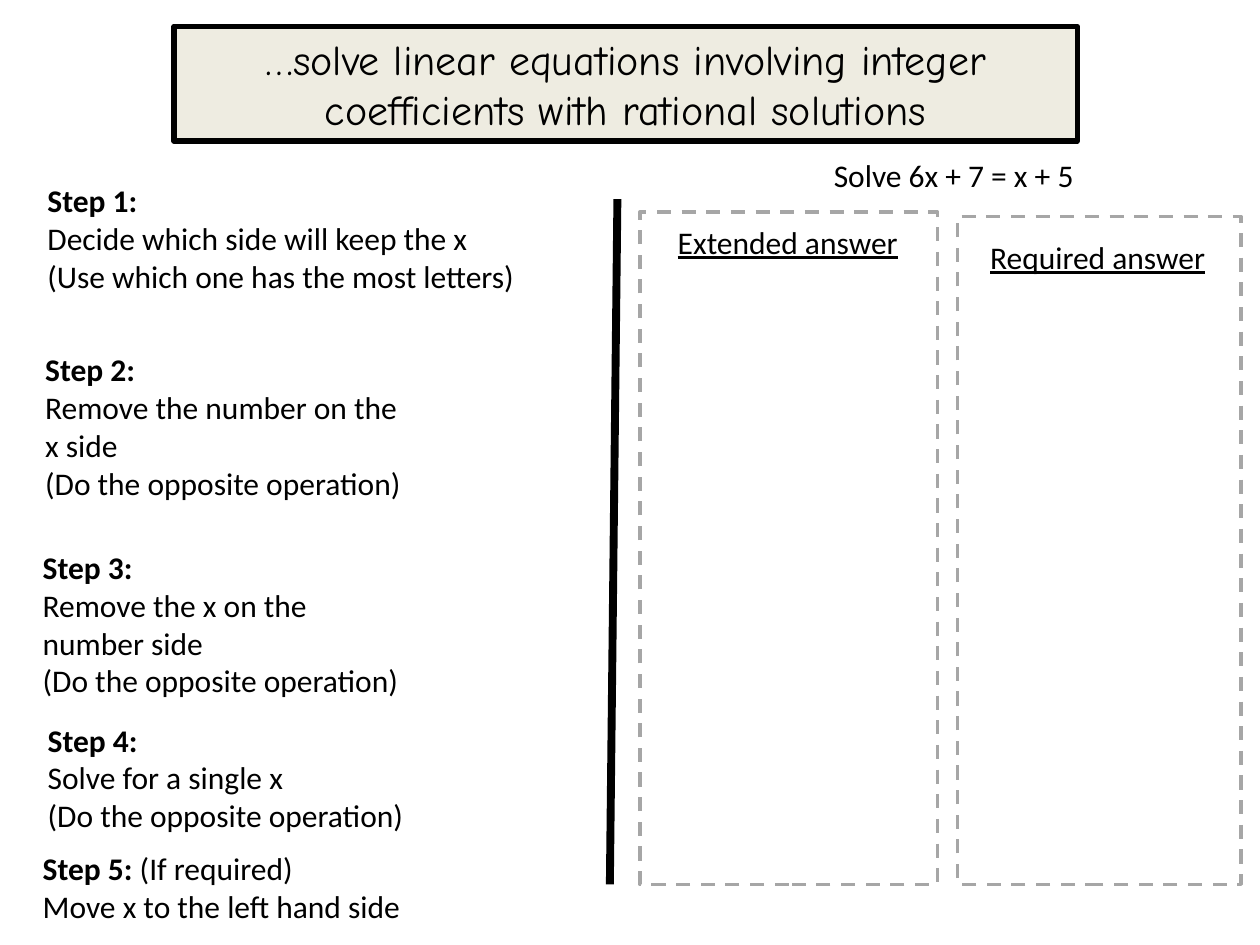
from pptx import Presentation
from pptx.dml.color import RGBColor
from pptx.enum.dml import MSO_LINE
from pptx.enum.shapes import MSO_CONNECTOR as CONN, MSO_SHAPE as SHAPE
from pptx.enum.text import MSO_ANCHOR as ANCHOR, PP_ALIGN as ALIGN
from pptx.oxml.ns import qn
from pptx.util import Pt
from lxml import etree

COLORS = {"ink": "000000", "cream": "EEECE1", "dash": "A6A6A6"}
OPPOSITE = "(Do the opposite operation)"


def rgb(name):
    return RGBColor.from_string(COLORS[name])


def add_text(p, text, font="Calibri", size=18, color="ink", bold=False, underline=False):
    r = p.add_run()
    r.text = text
    f = r.font
    f.name, f.size, f.bold, f.underline = font, Pt(size), bold, underline
    f.color.rgb = rgb(color)


class SlideBuilder:
    def __init__(self, slide):
        self.shapes = slide.shapes

    def box(self, x, y, w, h, line, weight, fill=None, dash=None):
        sp = self.shapes.add_shape(SHAPE.RECTANGLE, Pt(x), Pt(y), Pt(w), Pt(h))
        sp.shadow.inherit = False
        if fill:
            sp.fill.solid()
            sp.fill.fore_color.rgb = rgb(fill)
        else:
            sp.fill.background()
        sp.line.color.rgb = rgb(line)
        sp.line.width = Pt(weight)
        if dash:
            sp.line.dash_style = dash
        return sp

    def title(self, text, x, y, w, h):
        tf = self.box(x, y, w, h, "ink", 3, fill="cream").text_frame
        tf.word_wrap = True
        tf.vertical_anchor = ANCHOR.MIDDLE
        p = tf.paragraphs[0]
        p.alignment = ALIGN.CENTER
        add_text(p, text, font="Comic Neue", size=24)

    def line(self, x1, y1, x2, y2, weight):
        cn = self.shapes.add_connector(CONN.STRAIGHT, Pt(x1), Pt(y1), Pt(x2), Pt(y2))
        cn.line.color.rgb = rgb("ink")
        cn.line.width = Pt(weight)
        etree.SubElement(cn._element.spPr, qn("a:effectLst"))

    def text_box(self, x, y, w, h, wrap=False):
        tf = self.shapes.add_textbox(Pt(x), Pt(y), Pt(w), Pt(h)).text_frame
        tf.word_wrap = wrap
        return tf

    def label(self, text, x, y, w, h, **fmt):
        add_text(self.text_box(x, y, w, h).paragraphs[0], text, **fmt)

    def step(self, heading, note, lines, x, y, w, h, wrap):
        """Bold heading, optional plain note beside it, then plain lines."""
        tf = self.text_box(x, y, w, h, wrap)
        p = tf.paragraphs[0]
        add_text(p, heading, bold=True)
        if note:
            add_text(p, note)
        for text in lines:
            add_text(tf.add_paragraph(), text)


def main():
    prs = Presentation()
    prs.slide_width, prs.slide_height = Pt(720), Pt(540)
    s = SlideBuilder(prs.slides.add_slide(prs.slide_layouts[6]))

    s.title("…solve linear equations involving integer coefficients with rational solutions",
            99.4, 15.1, 516.2, 65.5)
    s.line(352.8, 113.8, 348.5, 505.4, 4.5)

    steps = [
        ("Step 1:", "", ["Decide which side will keep the x",
                         "(Use which one has the most letters)"],
         20, 100.1, 294.5, 72.7, True),
        ("Step 2:", "", ["Remove the number on the x side", OPPOSITE],
         18.7, 196.6, 222.5, 94.3, True),
        ("Step 3:", "", ["Remove the x on the number side", OPPOSITE],
         17.3, 309.6, 226.8, 94.3, True),
        ("Step 4:", "", ["Solve for a single x", OPPOSITE],
         20.2, 408.2, 220.3, 72.7, False),
        ("Step 5: ", "(If required)", ["Move x to the left hand side"],
         17.3, 481.7, 221.8, 51.1, False),
    ]
    for step in steps:
        s.step(*step)

    bottom = 505.4
    answers = [
        ("Extended answer", (380.2, 123.8, 141.8, 51.1), (365.8, 121, 169.9)),
        ("Required answer", (558.7, 132.5, 139, 51.1), (547.2, 123.8, 162)),
    ]
    for text, place, (x, y, w) in answers:
        s.label(text, *place, underline=True)
        s.box(x, y, w, bottom - y, "dash", 2, dash=MSO_LINE.DASH)
    s.label("Solve 6x + 7 = x + 5", 469.4, 85.7, 155.5, 28.8)

    prs.save("out.pptx")


if __name__ == "__main__":
    main()
